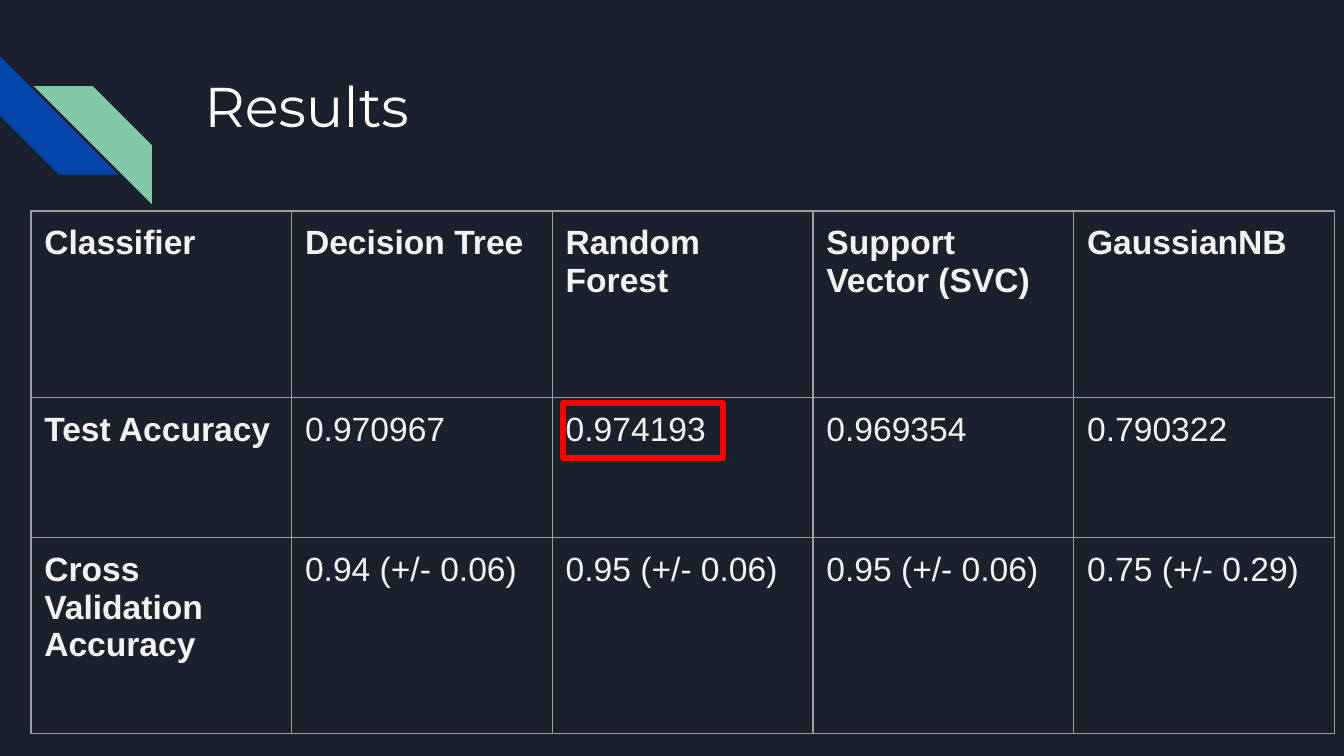
from lxml import etree
from pptx import Presentation
from pptx import util as u
from pptx.dml.color import RGBColor
from pptx.enum import shapes, text
from pptx.oxml import ns

NAVY = RGBColor(0x1B, 0x21, 0x2C)
BLUE = RGBColor(0x01, 0x45, 0xAC)
GREEN = RGBColor(0x82, 0xC7, 0xA5)
WHITE = RGBColor(0xFF, 0xFF, 0xFF)
PALE = RGBColor(0xF3, 0xF3, 0xF3)
GREY = RGBColor(0x9E, 0x9E, 0x9E)
RED = RGBColor(0xFF, 0x00, 0x00)

WIDE = 10
HIGH = WIDE * 9 / 16
PAD = u.Inches(0.1)
LEFT, TOP = 0.23, 1.57
COL = 1.94
ROWS = [1.39, 1.04, 1.46]
DATA = [
    ["Classifier", "Decision Tree", "Random Forest", "Support Vector (SVC)", "GaussianNB"],
    ["Test Accuracy", "0.970967", "0.974193", "0.969354", "0.790322"],
    ["Cross Validation Accuracy", "0.94 (+/- 0.06)", "0.95 (+/- 0.06)",
     "0.95 (+/- 0.06)", "0.75 (+/- 0.29)"],
]


def box(*sizes):
    return [u.Inches(size) for size in sizes]


def add_run(para, words, font, size, color, bold=False):
    run = para.add_run()
    run.text = words
    run.font.name = font
    run.font.size = u.Pt(size)
    run.font.bold = bold
    run.font.color.rgb = color


def add_stripe(slide, left, top, turn, color):
    stripe = slide.shapes.add_shape(
        shapes.MSO_SHAPE.DIAGONAL_STRIPE, *box(left, top, 0.88, 0.88))
    stripe.rotation = turn
    stripe.shadow.inherit = False
    stripe.fill.solid()
    stripe.fill.fore_color.rgb = color
    stripe.line.fill.background()


def set_title(slide, words):
    title = slide.shapes.title
    title.left, title.top, title.width, title.height = box(1.42, 0.43, 7.7, 1)
    frame = title.text_frame
    frame.margin_left = frame.margin_right = PAD
    frame.margin_top = frame.margin_bottom = PAD
    frame.vertical_anchor = text.MSO_ANCHOR.TOP
    frame.auto_size = text.MSO_AUTO_SIZE.NONE
    para = frame.paragraphs[0]
    para.alignment = text.PP_ALIGN.LEFT
    add_run(para, words, "Montserrat", 30, WHITE)


def set_edges(cell):
    """Draw a thin line on all four sides of the cell."""
    props = cell._tc.get_or_add_tcPr()
    for side in ("lnL", "lnR", "lnT", "lnB"):
        line = etree.SubElement(props, ns.qn("a:" + side), w=str(u.Pt(0.75)))
        fill = etree.SubElement(line, ns.qn("a:solidFill"))
        etree.SubElement(fill, ns.qn("a:srgbClr"), val=str(GREY))


def set_cell(cell, words, bold):
    set_edges(cell)
    cell.fill.background()
    cell.margin_left = cell.margin_right = PAD
    cell.margin_top = cell.margin_bottom = PAD
    add_run(cell.text_frame.paragraphs[0], words, "Arial", 18, PALE, bold)


def add_grid(slide):
    count = len(DATA[0])
    frame = slide.shapes.add_table(
        len(DATA), count, *box(LEFT, TOP, COL * count, sum(ROWS)))
    table = frame.table
    for col in table.columns:
        col.width = u.Inches(COL)
    for i, (high, line) in enumerate(zip(ROWS, DATA)):
        table.rows[i].height = u.Inches(high)
        for j, words in enumerate(line):
            set_cell(table.cell(i, j), words, bold=i == 0 or j == 0)


def mark_best(slide):
    """Frame the highest test accuracy."""
    left = LEFT + 2 * COL + 0.08
    top = TOP + ROWS[0] + 0.04
    mark = slide.shapes.add_shape(
        shapes.MSO_SHAPE.RECTANGLE, *box(left, top, 1.19, 0.41))
    mark.shadow.inherit = False
    mark.fill.background()
    mark.line.color.rgb = RED
    mark.line.width = u.Pt(3)


def main():
    deck = Presentation()
    deck.slide_width, deck.slide_height = box(WIDE, HIGH)
    slide = deck.slides.add_slide(deck.slide_layouts[5])
    slide.background.fill.solid()
    slide.background.fill.fore_color.rgb = NAVY
    add_stripe(slide, 0, 0.42, 270, BLUE)
    add_stripe(slide, 0.25, 0.64, 90, GREEN)
    set_title(slide, "Results")
    add_grid(slide)
    mark_best(slide)
    deck.save("out.pptx")


if __name__ == "__main__":
    main()
